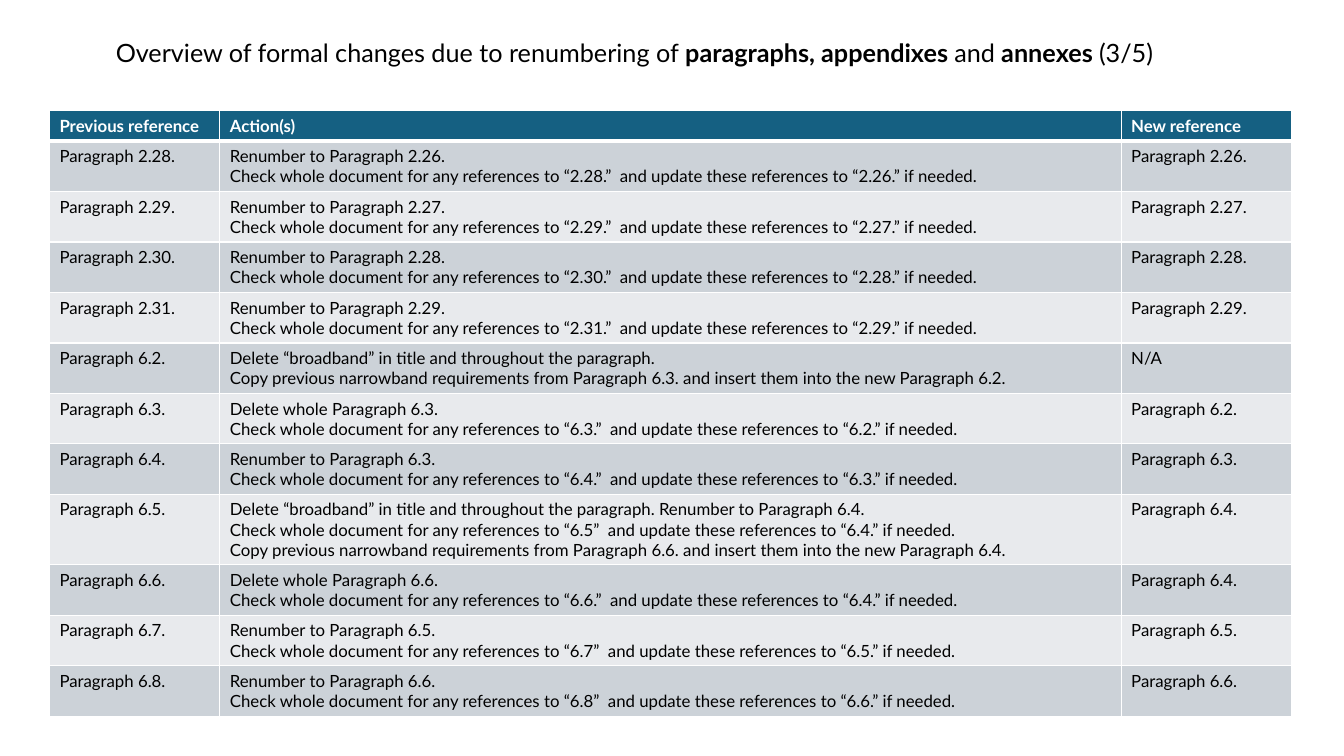
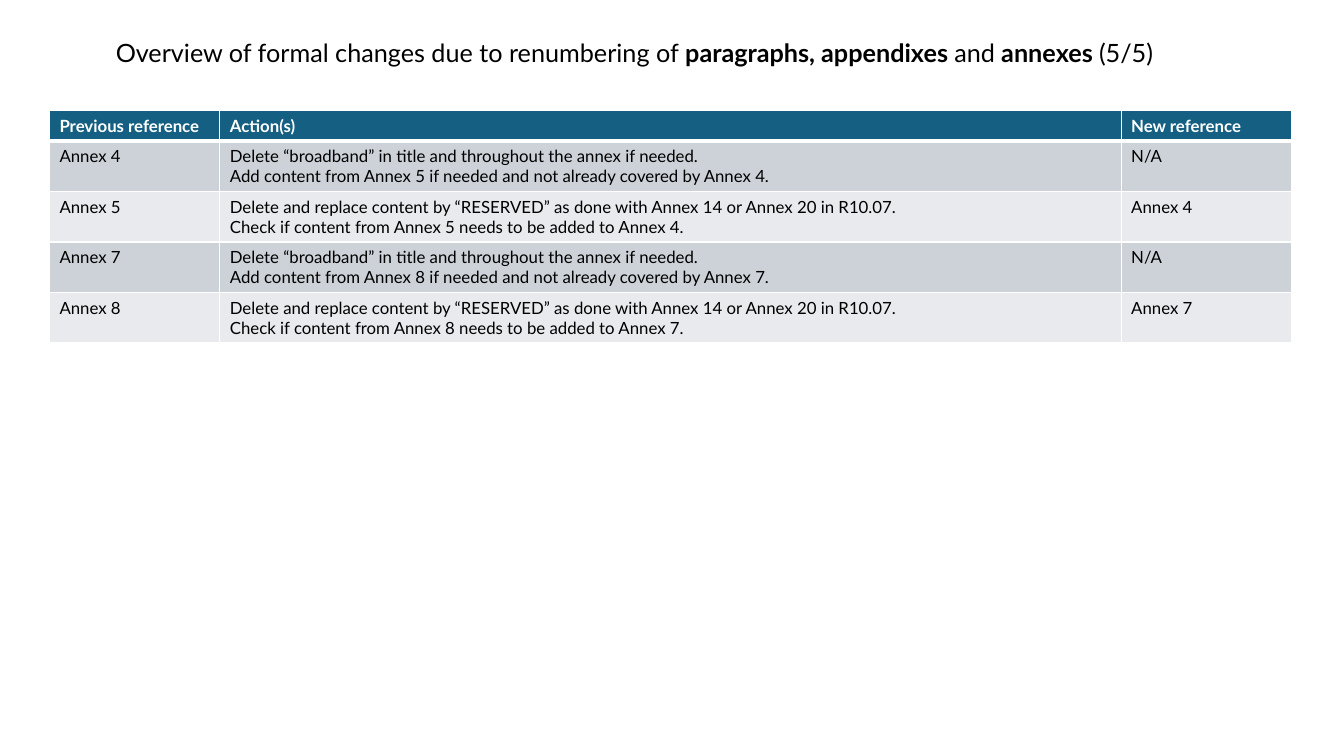
from dataclasses import dataclass

from lxml.etree import SubElement
from pptx import Presentation
from pptx.dml.color import RGBColor as Rgb
from pptx.enum.text import MSO_AUTO_SIZE as AutoSize
from pptx.oxml.ns import qn
from pptx.util import Inches, Pt


@dataclass(frozen=True)
class Theme:
    font: str = "Lato"
    title_size: int = 18
    table_size: int = 12
    ink: str = "000000"
    paper: str = "FFFFFF"
    header: str = "156082"
    bands: tuple = ("CCD2D8", "E8EAED")
    rule: float = 1
    header_rule: float = 3


THEME = Theme()

# Layout in inches
SLIDE_SIZE = (13.33, 7.5)
TITLE_BOX = (1.05, 0.32, 11.3, 0.4)
TABLE_LEFT, TABLE_TOP = 0.49, 1.1
COLUMNS = (1.69, 8.94, 1.69)
ROW_PADDING, LINE_HEIGHT = 0.1, 0.2

HEADINGS = ("Previous reference", ["Action(s)"], "New reference")


# Recurring wording
def check(old, new):
    return (f"Check whole document for any references to “{old}”  "
            f"and update these references to “{new}” if needed.")


def copy_narrowband(source, target):
    return (f"Copy previous narrowband requirements from Paragraph {source} "
            f"and insert them into the new Paragraph {target}")


def drop_broadband(part):
    return f"Delete “broadband” in title and throughout the {part}"


def renumbered(old, new, quoted=None):
    actions = [f"Renumber to Paragraph {new}", check(quoted or old, new)]
    return f"Paragraph {old}", actions, f"Paragraph {new}"


def deleted(old, new):
    actions = [f"Delete whole Paragraph {old}", check(old, new)]
    return f"Paragraph {old}", actions, f"Paragraph {new}"


def merged_annexes(kept, reserved):
    return [
        (f"Annex {kept}",
         [drop_broadband("annex if needed."),
          f"Add content from Annex {reserved} if needed and not already covered by Annex {kept}."],
         "N/A"),
        (f"Annex {reserved}",
         ["Delete and replace content by “RESERVED” as done with Annex 14 or Annex 20 in R10.07.",
          f"Check if content from Annex {reserved} needs to be added to Annex {kept}."],
         f"Annex {kept}"),
    ]


# Content
PARAGRAPH_ROWS = [
    *(renumbered(f"2.{number}.", f"2.{number - 2}.") for number in range(28, 32)),
    ("Paragraph 6.2.",
     [drop_broadband("paragraph."), copy_narrowband("6.3.", "6.2.")],
     "N/A"),
    deleted("6.3.", "6.2."),
    renumbered("6.4.", "6.3."),
    ("Paragraph 6.5.",
     [drop_broadband("paragraph. Renumber to Paragraph 6.4."),
      check("6.5", "6.4."), copy_narrowband("6.6.", "6.4.")],
     "Paragraph 6.4."),
    deleted("6.6.", "6.4."),
    renumbered("6.7.", "6.5.", quoted="6.7"),
    renumbered("6.8.", "6.6.", quoted="6.8"),
]
ANNEX_ROWS = merged_annexes(4, 5) + merged_annexes(7, 8)


# Elements
def add_span(para, text, size, color, bold=False):
    span = para.add_run()
    span.text = text
    formats = {"name": THEME.font, "size": Pt(size), "bold": bold}
    for name, value in formats.items():
        setattr(span.font, name, value)
    span.font.color.rgb = Rgb.from_string(color)


def add_title(page, part):
    box = page.shapes.add_textbox(*map(Inches, TITLE_BOX))
    frame = box.text_frame
    frame.word_wrap = True
    frame.auto_size = AutoSize.SHAPE_TO_FIT_TEXT
    spans = (
        ("Overview of formal changes due to renumbering of ", False),
        ("paragraphs, appendixes ", True),
        ("and", False),
        (" annexes ", True),
        (f"({part}/5)", False),
    )
    for text, bold in spans:
        add_span(frame.paragraphs[0], text, THEME.title_size, THEME.ink, bold)


def set_borders(cell, top, bottom):
    """Draw the four cell edges; they must precede the fill in the XML."""
    properties = cell._tc.get_or_add_tcPr()
    widths = {"a:lnL": THEME.rule, "a:lnR": THEME.rule, "a:lnT": top, "a:lnB": bottom}
    for tag, width in widths.items():
        line = SubElement(properties, qn(tag), w=str(Pt(width)))
        fill = SubElement(line, qn("a:solidFill"))
        SubElement(fill, qn("a:srgbClr"), val=THEME.paper)


def fill_cell(cell, lines, row):
    is_header = row == 0
    set_borders(cell,
                top=THEME.header_rule if row == 1 else THEME.rule,
                bottom=THEME.header_rule if is_header else THEME.rule)
    cell.fill.solid()
    background = THEME.header if is_header else THEME.bands[(row - 1) % 2]
    cell.fill.fore_color.rgb = Rgb.from_string(background)
    frame = cell.text_frame
    for index, text in enumerate(lines):
        para = frame.add_paragraph() if index else frame.paragraphs[0]
        color = THEME.paper if is_header else THEME.ink
        add_span(para, text, THEME.table_size, color, is_header)


def add_change_table(page, changes):
    rows = [HEADINGS, *changes]
    heights = [ROW_PADDING + LINE_HEIGHT * len(actions) for _, actions, _ in rows]
    table = page.shapes.add_table(
        len(rows), len(COLUMNS), Inches(TABLE_LEFT), Inches(TABLE_TOP),
        Inches(sum(COLUMNS)), Inches(sum(heights))).table
    for column, width in zip(table.columns, COLUMNS):
        column.width = Inches(width)
    for index, (old, actions, new) in enumerate(rows):
        table.rows[index].height = Inches(heights[index])
        for cell, lines in zip(table.rows[index].cells, ([old], actions, [new])):
            fill_cell(cell, lines, index)


def add_page(deck, part, changes):
    page = deck.slides.add_slide(deck.slide_layouts[6])
    add_title(page, part)
    add_change_table(page, changes)


def main():
    deck = Presentation()
    deck.slide_width, deck.slide_height = map(Inches, SLIDE_SIZE)
    add_page(deck, 3, PARAGRAPH_ROWS)
    add_page(deck, 5, ANNEX_ROWS)
    deck.save("out.pptx")


if __name__ == "__main__":
    main()
